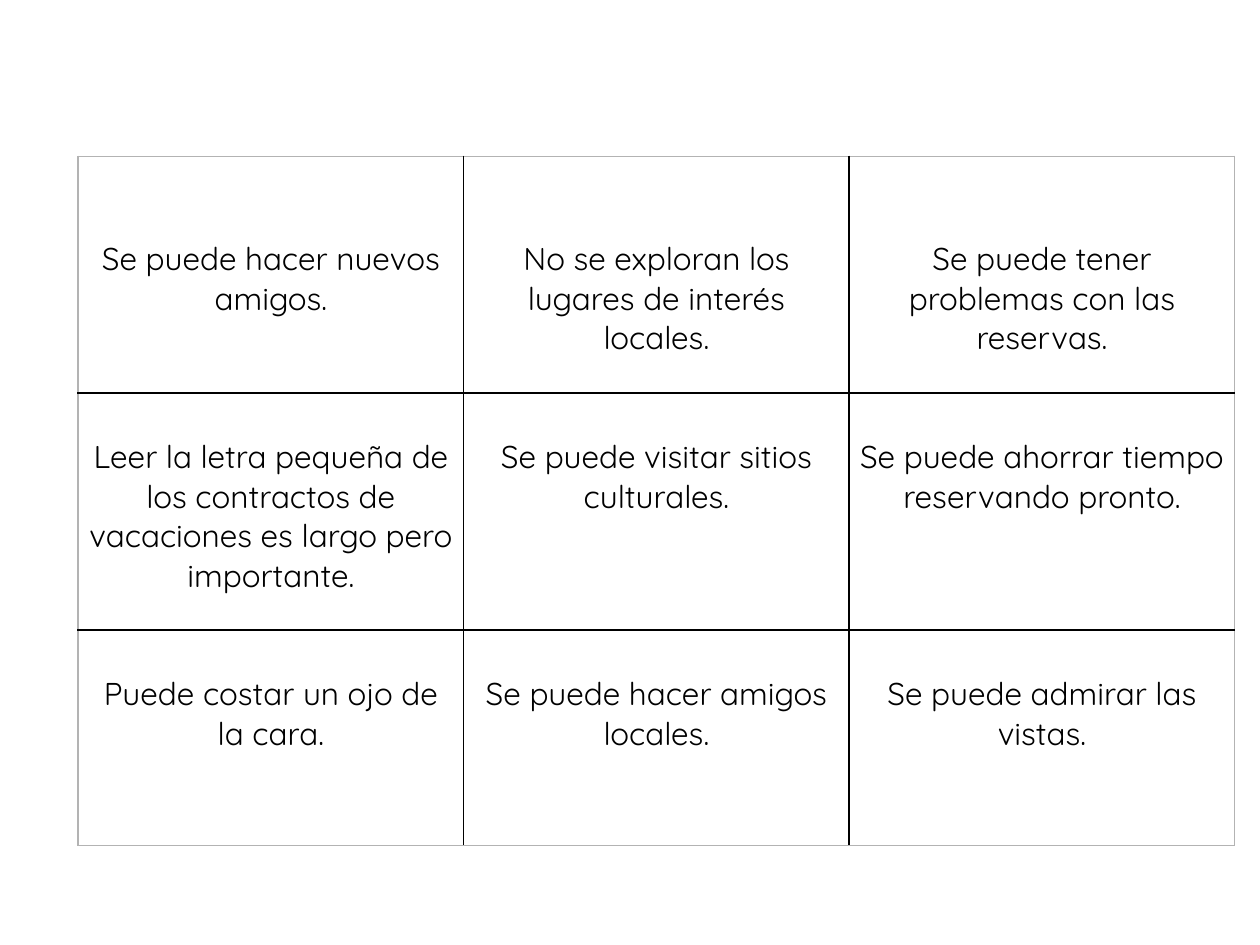
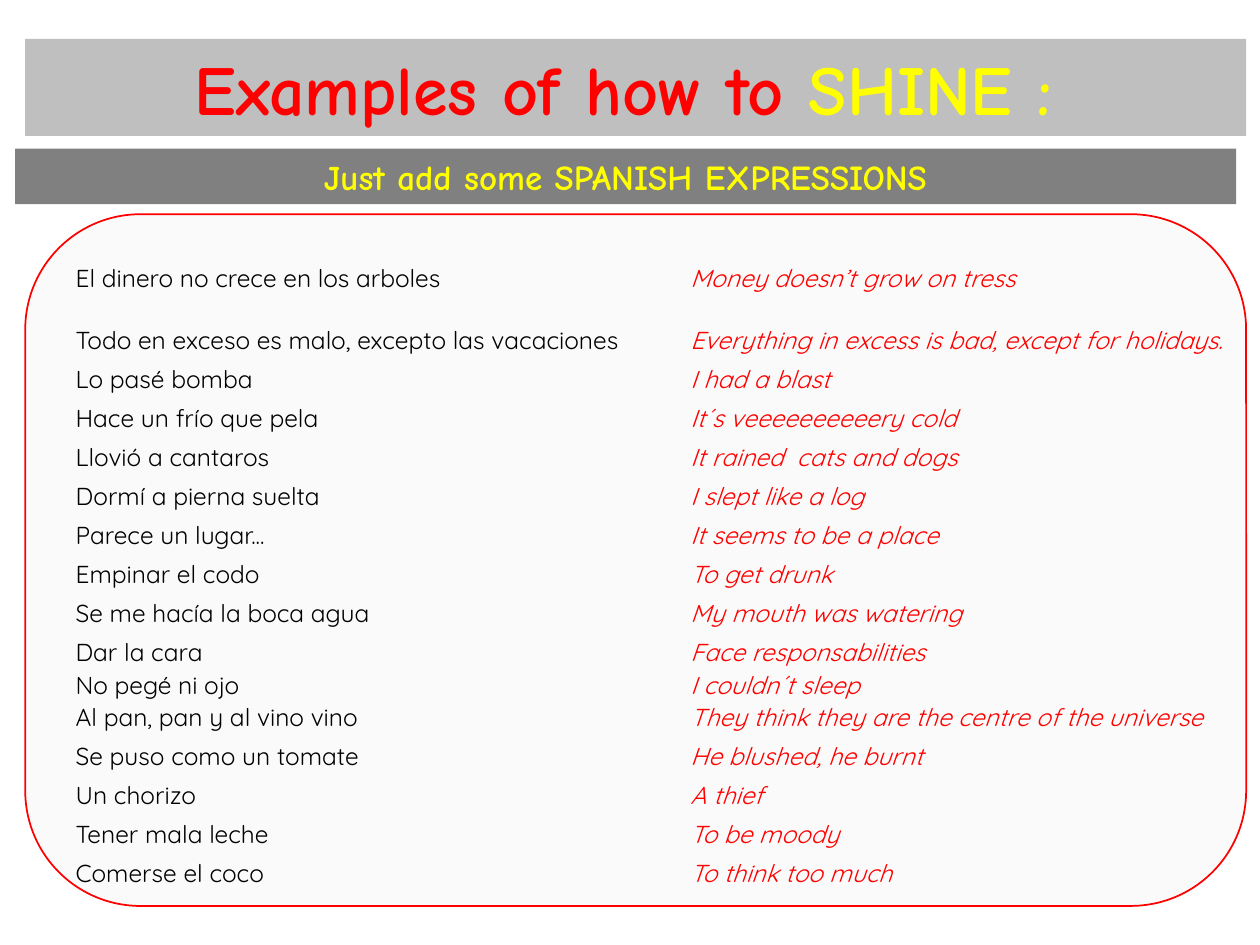
from lxml import etree
from pptx import Presentation
from pptx.dml.color import RGBColor
from pptx.enum.shapes import MSO_SHAPE
from pptx.enum.text import MSO_ANCHOR, PP_ALIGN
from pptx.oxml.ns import qn
from pptx.util import Inches, Pt

RECT, ROUND = MSO_SHAPE.RECTANGLE, MSO_SHAPE.ROUNDED_RECTANGLE
TOP, MIDDLE, BOTTOM = MSO_ANCHOR.TOP, MSO_ANCHOR.MIDDLE, MSO_ANCHOR.BOTTOM
LEFT, CENTER = PP_ALIGN.LEFT, PP_ALIGN.CENTER

BLACK = RGBColor(0x00, 0x00, 0x00)
RED = RGBColor(0xFF, 0x00, 0x00)
YELLOW = RGBColor(0xFF, 0xFF, 0x00)
SILVER = RGBColor(0xBF, 0xBF, 0xBF)
GREY = RGBColor(0x80, 0x80, 0x80)
EDGE = RGBColor(0xB3, 0xB3, 0xB3)
PALE = RGBColor(0xFA, 0xFA, 0xFA)

HEAD_FONT, BODY_FONT = "Comic Neue", "Quicksand"
NO_GRID = "{2D5ABB26-0587-4C30-8999-92F81FD0307C}"
LINE = 0.31

CARDS = [
    ["Se puede hacer nuevos amigos.",
     "No se exploran los lugares de interés locales.",
     "Se puede tener problemas con las reservas."],
    ["Leer la letra pequeña de los contractos de vacaciones es largo pero importante.",
     "Se puede visitar sitios culturales.",
     "Se puede ahorrar tiempo reservando pronto."],
    ["Puede costar un ojo de la cara.",
     "Se puede hacer amigos locales.",
     "Se puede admirar las vistas."],
]
PHRASES = [
    ("El dinero no crece en los arboles", "Money doesn’t grow on tress"),
    ("Todo en exceso es malo, excepto las vacaciones",
     "Everything in excess is bad, except for holidays."),
    ("Lo pasé bomba", "I had a blast"),
    ("Hace un frío que pela", "It´s veeeeeeeeeery cold"),
    ("Llovió a cantaros", "It rained  cats and dogs"),
    ("Dormí a pierna suelta", "I slept like a log"),
    ("Parece un lugar...", "It seems to be a place"),
    ("Empinar el codo", "To get drunk"),
    ("Se me hacía la boca agua", "My mouth was watering"),
    ("Dar la cara", "Face responsabilities"),
    ("No pegé ni ojo", "I couldn´t sleep"),
    ("Al pan, pan y al vino vino", "They think they are the centre of the universe"),
    ("Se puso como un tomate", "He blushed, he burnt"),
    ("Un chorizo", "A thief"),
    ("Tener mala leche", "To be moody"),
    ("Comerse el coco", "To think too much"),
]
ODD_ROWS = {1: 0.49, 10: 0.26, 11: 0.24}


def write(frame, text, size=14, color=BLACK, font=BODY_FONT, bold=False,
          italic=False, align=LEFT):
    """Add a formatted run to the first paragraph of a frame."""
    para = frame.paragraphs[0]
    para.alignment = align
    run = para.add_run()
    run.text = text
    run.font.size = Pt(size)
    run.font.name = font
    run.font.bold = bold
    run.font.italic = italic
    run.font.color.rgb = color


def block(slide, kind, box, fill, line=None):
    """Add a filled shape with an optional outline."""
    shape = slide.shapes.add_shape(kind, *map(Inches, box))
    shape.shadow.inherit = False
    shape.fill.solid()
    shape.fill.fore_color.rgb = fill
    if line is None:
        shape.line.fill.background()
    else:
        shape.line.color.rgb = line
        shape.line.width = Pt(1)
    return shape


def band(slide, box, fill, parts, size):
    """Add a heading band with centred runs of text and colour."""
    frame = block(slide, RECT, box, fill).text_frame
    frame.word_wrap = True
    frame.vertical_anchor = MIDDLE
    for text, color in parts:
        write(frame, text, size=size, color=color, font=HEAD_FONT, bold=True,
              align=CENTER)


def grid(slide, left, top, cols, rows):
    """Add a plain table with the given column widths and row heights."""
    box = map(Inches, (left, top, sum(cols), sum(rows)))
    table = slide.shapes.add_table(len(rows), len(cols), *box).table
    table.first_row = table.horz_banding = False
    table._tbl.tblPr.find(qn("a:tableStyleId")).text = NO_GRID
    for col, width in zip(table.columns, cols):
        col.width = Inches(width)
    for row, height in zip(table.rows, rows):
        row.height = Inches(height)
    return table


def pad(cell, anchor, sides, top, bottom):
    """Set the anchor, margins and empty fill of a cell."""
    cell.vertical_anchor = anchor
    cell.margin_left = cell.margin_right = Inches(sides)
    cell.margin_top, cell.margin_bottom = Inches(top), Inches(bottom)
    cell.fill.background()


def rule(cell, side, color):
    """Draw one border of a cell."""
    props = cell._tc.get_or_add_tcPr()
    line = etree.SubElement(props, qn(f"a:ln{side}"), w=str(Pt(1)))
    fill = etree.SubElement(line, qn("a:solidFill"))
    etree.SubElement(fill, qn("a:srgbClr"), val=str(color))


def cards(slide, left, top):
    """Place the grid of opinion cards."""
    table = grid(slide, left, top, [3.06] * 3, [1.88, 1.88, 1.71])
    last = len(CARDS) - 1
    for r, row in enumerate(CARDS):
        drop = LINE * (2 if r == 0 else 1)
        for c, text in enumerate(row):
            cell = table.cell(r, c)
            outer = {"L": c == 0, "R": c == last, "T": r == 0, "B": r == last}
            for side, rim in outer.items():
                rule(cell, side, EDGE if rim else BLACK)
            pad(cell, TOP, 0.07, 0.04 + drop, 0.04)
            write(cell.text_frame, text, size=18, align=CENTER)


def phrases(slide, box):
    """Place the rounded panel and its list of phrases."""
    left, top = box[:2]
    block(slide, ROUND, box, PALE, RED)
    rows = [ODD_ROWS.get(r, LINE) for r in range(len(PHRASES))]
    table = grid(slide, left + 0.39, top + 0.32, [4.88, 4.33], rows)
    for r, pair in enumerate(PHRASES):
        for c, text in enumerate(pair):
            cell = table.cell(r, c)
            pad(cell, BOTTOM, 0.01, 0.01, 0)
            write(cell.text_frame, text, color=RED if c else BLACK,
                  italic=bool(c))


def main():
    """Build and save both slides."""
    deck = Presentation()
    deck.slide_width, deck.slide_height = Inches(10), Inches(7.5)
    first, second = (deck.slides.add_slide(deck.slide_layouts[6])
                     for _ in range(2))
    cards(first, 0.62, 1.24)
    band(second, (0.2, 0.31, 9.69, 0.77), SILVER,
         [("Examples of how to ", RED), ("SHINE : ", YELLOW)], 40)
    phrases(second, (0.2, 1.7, 9.69, 5.49))
    band(second, (0.12, 1.18, 9.69, 0.44), GREY,
         [("Just add some SPANISH EXPRESSIONS", YELLOW)], 20)
    deck.save("out.pptx")


if __name__ == "__main__":
    main()
